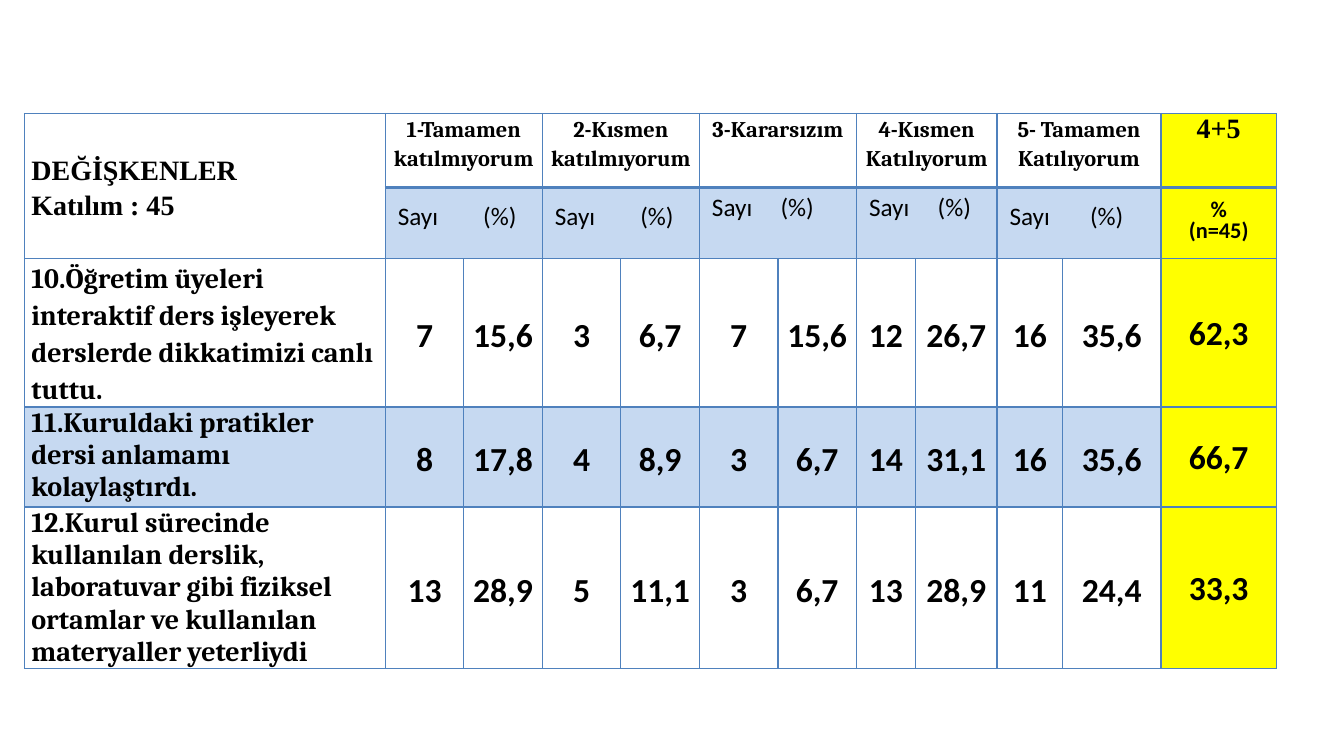
from lxml import etree
from pptx import Presentation
from pptx.dml.color import RGBColor
from pptx.enum import text
from pptx.oxml import ns
from pptx.util import Pt

BLUE, PALE, YELLOW, BLACK = "4F81BD", "C6D9F1", "FFFF00", "000000"
SERIF, HEADING, SANS = "Cambria", "Times New Roman", "Calibri"
LEFT, TOP = 17.4, 81
COLUMNS = [257.8] + [56.1] * 6 + [42.2, 58.2, 46.8, 70.4, 82.4]
ROWS = [52.8, 50.8, 105.6, 71.4, 115.6]

VARIABLES = ["DEĞİŞKENLER", "Katılım : 45"]
# answer, tab stop of its percent label, bottom margin of its label cell
ANSWERS = [
    ("1-Tamamen katılmıyorum", 61, 0),
    ("2-Kısmen katılmıyorum", 61, 0),
    ("3-Kararsızım", 49, 13),
    ("4-Kısmen Katılıyorum", 49, 13),
    ("5- Tamamen Katılıyorum", 57.5, 0),
]
# question, line spacing, counts and percents, total, fill
QUESTIONS = [
    ("10.Öğretim üyeleri interaktif ders işleyerek derslerde dikkatimizi canlı tuttu.", 1.15,
     ["7", "15,6", "3", "6,7", "7", "15,6", "12", "26,7", "16", "35,6"], "62,3", None),
    ("11.Kuruldaki pratikler dersi anlamamı kolaylaştırdı.", 1.0,
     ["8", "17,8", "4", "8,9", "3", "6,7", "14", "31,1", "16", "35,6"], "66,7", PALE),
    ("12.Kurul sürecinde kullanılan derslik, laboratuvar gibi fiziksel ortamlar ve "
     "kullanılan materyaller yeterliydi", 1.0,
     ["13", "28,9", "5", "11,1", "3", "6,7", "13", "28,9", "11", "24,4"], "33,3", None),
]


def rgb(value):
    return RGBColor.from_string(value)


def add_child(parent, tag, **attrs):
    return etree.SubElement(parent, ns.qn(tag), attrs)


def set_borders(cell, top=1, bottom=1):
    tcPr = cell._tc.get_or_add_tcPr()
    for side, width in dict(L=1, R=1, T=top, B=bottom).items():
        line = add_child(tcPr, f"a:ln{side}", w=str(Pt(width)))
        add_child(add_child(line, "a:solidFill"), "a:srgbClr", val=BLUE)


def write(cell, lines, size, font, spacing=1.0, bold=True, center=True, middle=True,
          fill=None, margins=(5, 0, 5, 0), tab=None):
    """Fill a cell; margins are left, top, right and bottom."""
    if fill:
        cell.fill.solid()
        cell.fill.fore_color.rgb = rgb(fill)
    else:
        cell.fill.background()
    cell.vertical_anchor = text.MSO_ANCHOR.MIDDLE if middle else text.MSO_ANCHOR.TOP
    for side, margin in zip(("left", "top", "right", "bottom"), margins):
        setattr(cell, f"margin_{side}", Pt(margin))
    tf = cell.text_frame
    for i, line in enumerate(lines):
        p = tf.add_paragraph() if i else tf.paragraphs[0]
        p.alignment = text.PP_ALIGN.CENTER if center else text.PP_ALIGN.LEFT
        p.line_spacing = spacing
        if tab:
            stops = add_child(p._p.get_or_add_pPr(), "a:tabLst")
            add_child(stops, "a:tab", pos=str(Pt(tab)), algn="l")
        r = p.add_run()
        r.text = line
        for name, value in dict(size=Pt(size), name=font, bold=bold).items():
            setattr(r.font, name, value)
        r.font.color.rgb = rgb(BLACK)


prs = Presentation()
prs.slide_width, prs.slide_height = Pt(960), Pt(540)
s = prs.slides.add_slide(prs.slide_layouts[6])
table = s.shapes.add_table(len(ROWS), len(COLUMNS), Pt(LEFT), Pt(TOP),
                           Pt(sum(COLUMNS)), Pt(sum(ROWS))).table
table.first_row = table.horz_banding = False
for column, width in zip(table.columns, COLUMNS):
    column.width = Pt(width)
for row, height in zip(table.rows, ROWS):
    row.height = Pt(height)

for r_index in range(len(ROWS)):
    for c_index in range(len(COLUMNS)):
        heading = c_index > 0
        set_borders(table.cell(r_index, c_index),
                    top=2.25 if heading and r_index == 1 else 1,
                    bottom=2.25 if heading and r_index == 0 else 1)

total = len(COLUMNS) - 1
table.cell(0, 0).merge(table.cell(1, 0))
write(table.cell(0, 0), VARIABLES, 20, HEADING, 1.15, center=False)
for i, (answer, tab, bottom) in enumerate(ANSWERS):
    col = 1 + 2 * i
    for row in (0, 1):
        table.cell(row, col).merge(table.cell(row, col + 1))
    write(table.cell(0, col), [answer], 16, SERIF, 1.15, middle=False)
    write(table.cell(1, col), ["Sayı\t(%)"], 18, SANS, Pt(13), bold=False, center=False,
          fill=PALE, margins=(9, 0, 5, bottom), tab=tab)
write(table.cell(0, total), ["4+5"], 20, HEADING, middle=False, fill=YELLOW)
write(table.cell(1, total), ["%", "(n=45)"], 16, SANS, Pt(15), fill=YELLOW)

for row, (question, spacing, values, score, fill) in enumerate(QUESTIONS, 2):
    write(table.cell(row, 0), [question], 20, SERIF, spacing, center=False, middle=False,
          fill=fill)
    for col, value in enumerate(values, 1):
        write(table.cell(row, col), [value], 24, SANS, 1.15, fill=fill)
    write(table.cell(row, total), [score], 24, SANS, fill=YELLOW, margins=(1, 1, 1, 0))

prs.save("out.pptx")
